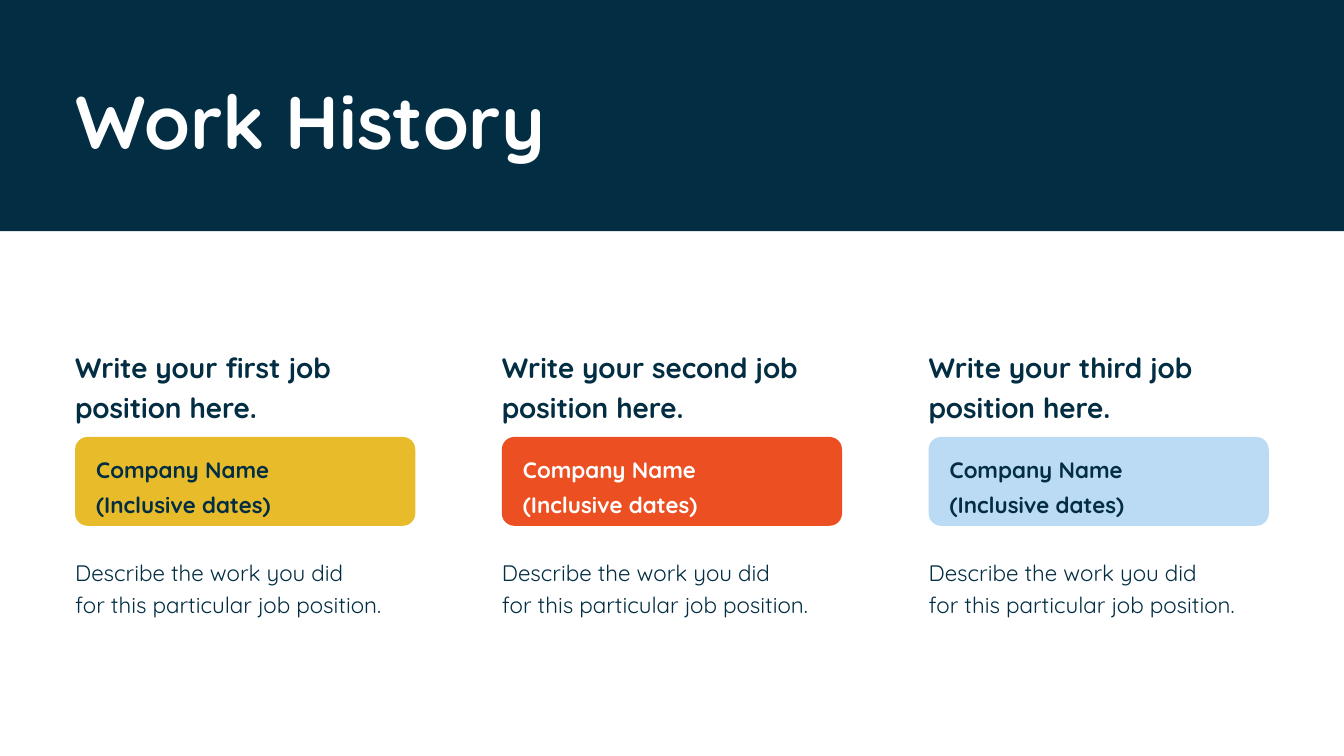
"""Build the Work History slide with three job columns."""
from pptx import Presentation
from pptx.dml.color import RGBColor
from pptx.enum.shapes import MSO_SHAPE
from pptx.enum.text import MSO_ANCHOR, MSO_AUTO_SIZE, PP_ALIGN
from pptx.util import Cm, Pt

RECTANGLE = MSO_SHAPE.RECTANGLE
ROUNDED = MSO_SHAPE.ROUNDED_RECTANGLE
TOP = MSO_ANCHOR.TOP
LEFT = PP_ALIGN.LEFT
GROW = MSO_AUTO_SIZE.SHAPE_TO_FIT_TEXT

FONT = "Quicksand"
NAVY, WHITE = "022D42", "FFFFFF"
TITLE = "Work History"
COMPANY = ["Company Name", "(Inclusive dates)"]
DESCRIPTION = ["Describe the work you did", "for this particular job position."]
JOBS = [
    ("Write your first job position here.", "E8BB2B", NAVY),
    ("Write your second job position here.", "EC4F22", WHITE),
    ("Write your third job position here.", "BADBF3", NAVY),
]

SLIDE_WIDTH, SLIDE_HEIGHT = 25.4, 14.29
MARGIN = 1.42
COLUMN_WIDTH = 6.43
COLUMN_STEP = (SLIDE_WIDTH - 2 * MARGIN - COLUMN_WIDTH) / (len(JOBS) - 1)
LABEL_INSET = 0.4


def color(value):
    """Turn a hex string into a colour."""
    return RGBColor.from_string(value)


def add_block(shapes, kind, box, fill):
    """Add a filled shape without outline or shadow."""
    shape = shapes.add_shape(kind, *map(Cm, box))
    shape.shadow.inherit = False
    shape.fill.solid()
    shape.fill.fore_color.rgb = color(fill)
    shape.line.fill.background()
    return shape


def write(shape, lines, *, size, ink=NAVY, bold=False, spacing=1.0):
    """Write one paragraph per line into a shape."""
    frame = shape.text_frame
    frame.word_wrap = True
    frame.auto_size = GROW
    frame.vertical_anchor = TOP
    frame.margin_left = frame.margin_right = 0
    frame.margin_top = frame.margin_bottom = 0
    frame.text = "\n".join(lines)
    for paragraph in frame.paragraphs:
        paragraph.alignment = LEFT
        paragraph.line_spacing = spacing
        paragraph.font.name = FONT
        paragraph.font.size = Pt(size)
        paragraph.font.bold = bold
        paragraph.font.color.rgb = color(ink)


def add_text(shapes, box, lines, **style):
    """Add a text box with formatted lines."""
    write(shapes.add_textbox(*map(Cm, box)), lines, **style)


def add_job(shapes, left, position, fill, ink):
    """Add one column: position, company badge and description."""
    add_text(shapes, (left, 6.5, COLUMN_WIDTH, 1.42), [position],
             size=15, bold=True, spacing=1.2)
    badge = shapes.add_group_shape().shapes
    pill = add_block(badge, ROUNDED, (left, 8.26, COLUMN_WIDTH, 1.68), fill)
    pill.adjustments[0] = 0.14
    label_box = (left + LABEL_INSET, 8.48, COLUMN_WIDTH - 2 * LABEL_INSET, 1.17)
    label = add_block(badge, RECTANGLE, label_box, fill)
    write(label, COMPANY, size=12, ink=ink, bold=True, spacing=1.3)
    add_text(shapes, (left, 10.46, COLUMN_WIDTH, 1.12), DESCRIPTION,
             size=12, spacing=1.2)


def main():
    """Build and save the presentation."""
    presentation = Presentation()
    presentation.slide_width = Cm(SLIDE_WIDTH)
    presentation.slide_height = Cm(SLIDE_HEIGHT)
    slide = presentation.slides.add_slide(presentation.slide_layouts[6])
    add_block(slide.shapes, RECTANGLE, (0, 0, SLIDE_WIDTH, 4.37), NAVY)
    add_text(slide.shapes, (MARGIN, MARGIN, 14.38, 1.7), [TITLE],
             size=40, ink=WHITE, bold=True)
    for index, job in enumerate(JOBS):
        add_job(slide.shapes, MARGIN + index * COLUMN_STEP, *job)
    presentation.save("out.pptx")


if __name__ == "__main__":
    main()
